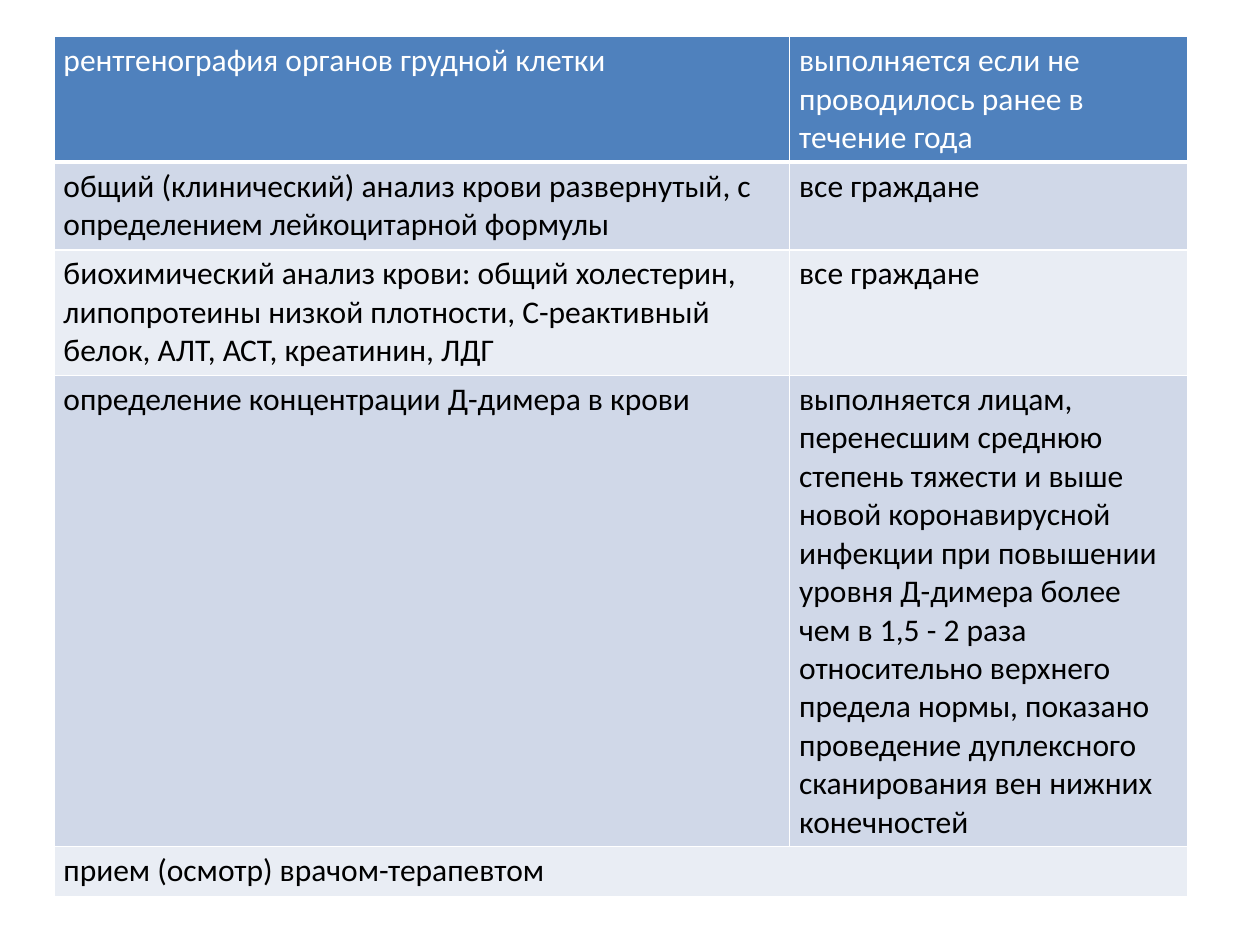
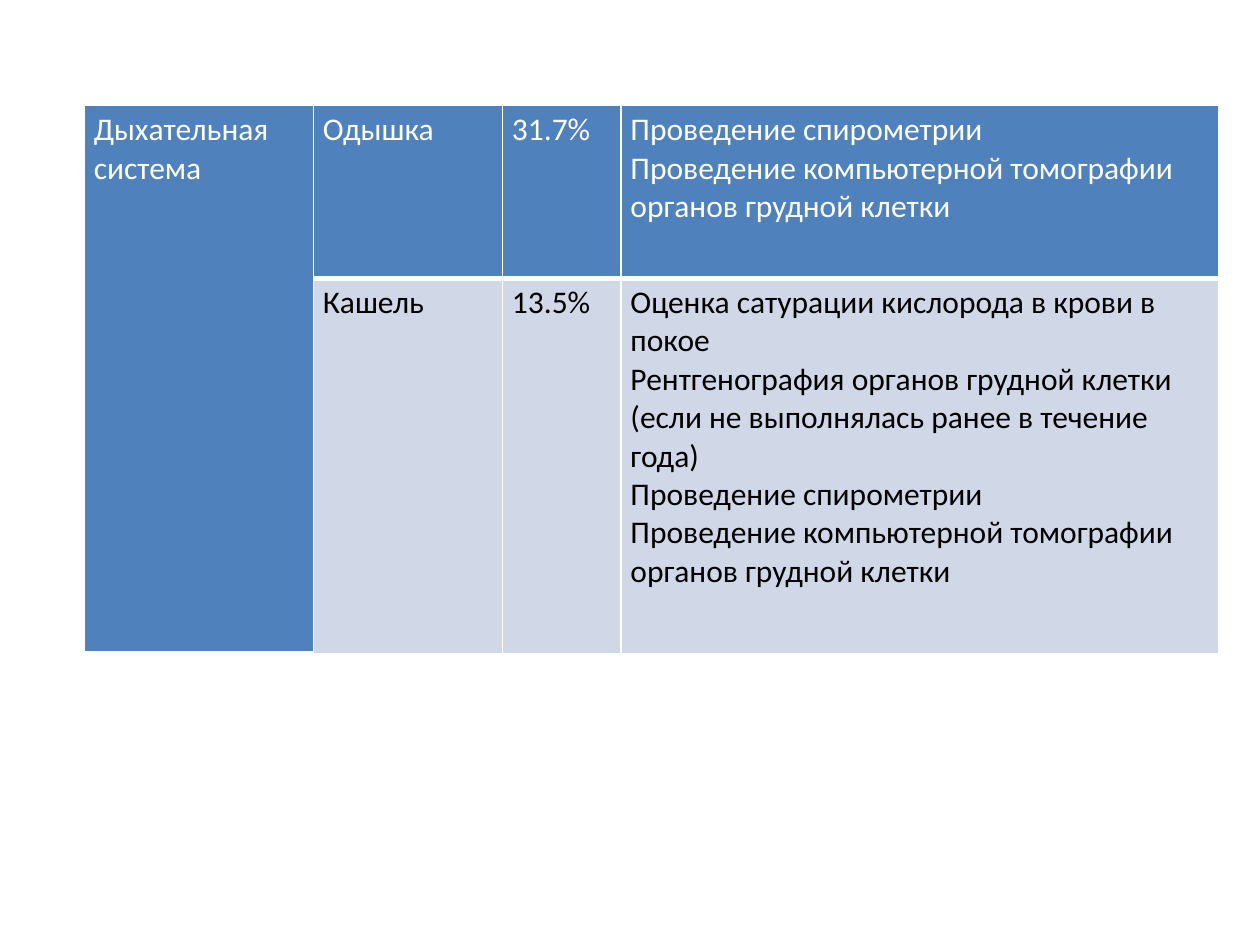
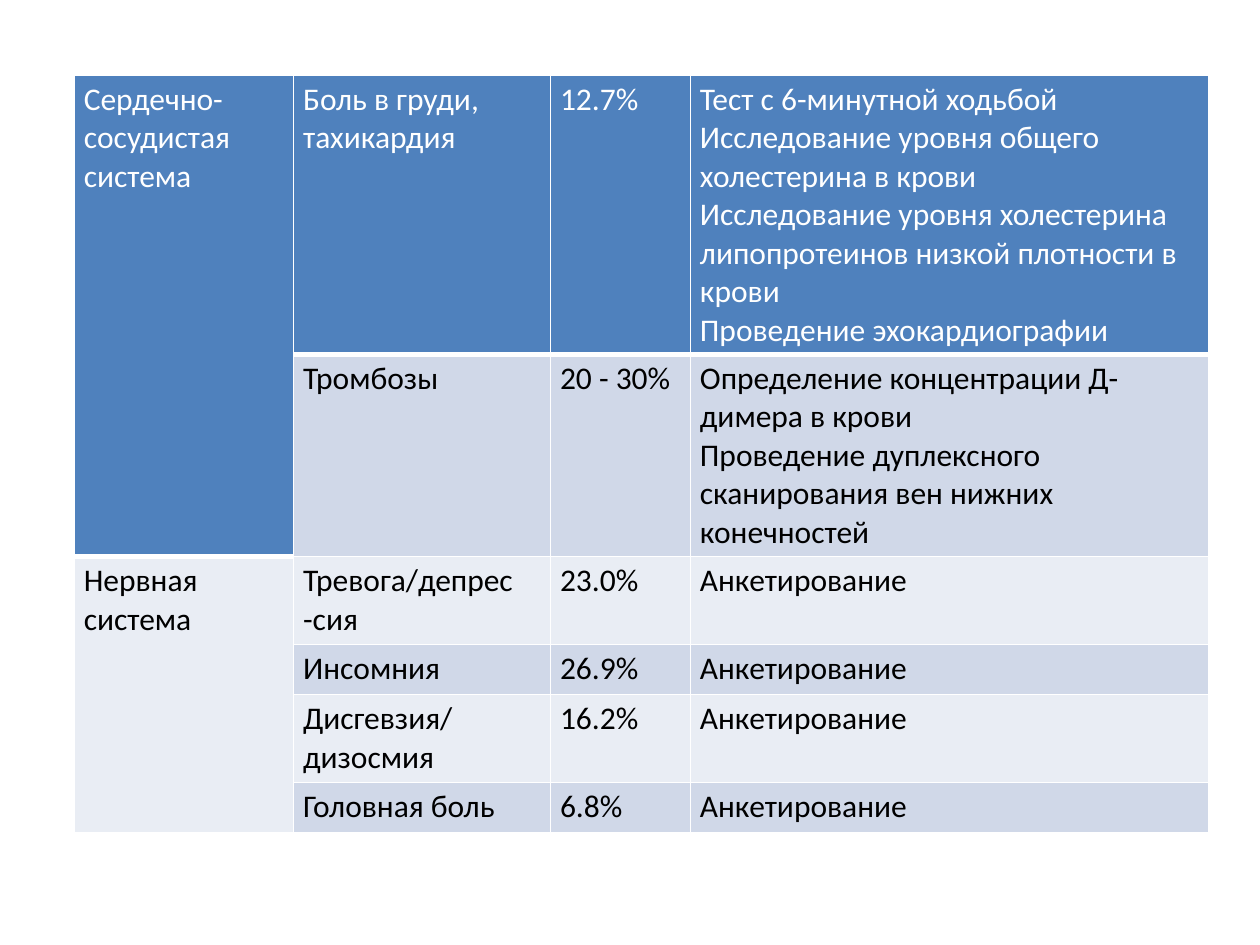
from dataclasses import dataclass

from lxml.etree import SubElement
from pptx import Presentation
from pptx.dml.color import RGBColor
from pptx.oxml.ns import qn
from pptx.util import Cm, Pt

WHITE = RGBColor(0xFF, 0xFF, 0xFF)
BLACK = RGBColor(0x00, 0x00, 0x00)
HEADER_BLUE = RGBColor(0x4F, 0x81, 0xBD)
BANDS = (RGBColor(0xE9, 0xED, 0xF4), RGBColor(0xD0, 0xD8, 0xE8))

FONT = "Calibri"
FONT_SIZE = Pt(18)
LINE_CM = 0.76
PADDING_CM = 0.25
THIN = Pt(1)
THICK = Pt(3)
BLANK_LAYOUT = 6


@dataclass(frozen=True)
class Span:
    top: int
    left: int
    bottom: int
    right: int

    def covers(self, row: int, column: int) -> bool:
        return self.top <= row <= self.bottom and self.left <= column <= self.right


@dataclass(frozen=True)
class Grid:
    left: float
    top: float
    widths: tuple[float, ...]
    heights: tuple[float, ...]
    rows: tuple[tuple[str, ...], ...]
    spans: tuple[Span, ...]

    def band_row(self, row: int, column: int) -> int:
        return next((s.top for s in self.spans if s.covers(row, column)), row)


def heights_for(*line_counts: int) -> tuple[float, ...]:
    return tuple(round(count * LINE_CM + PADDING_CM, 2) for count in line_counts)


EXAMINATIONS = Grid(
    left=1.09,
    top=0.74,
    widths=(14.83, 8.03),
    heights=heights_for(3, 2, 3, 12, 1),
    rows=(
        ("рентгенография органов грудной клетки",
         "выполняется если не проводилось ранее в течение года"),
        ("общий (клинический) анализ крови развернутый, с определением лейкоцитарной формулы",
         "все граждане"),
        ("биохимический анализ крови: общий холестерин, липопротеины низкой плотности, "
         "C-реактивный белок, АЛТ, АСТ, креатинин, ЛДГ",
         "все граждане"),
        ("определение концентрации Д-димера в крови",
         "выполняется лицам, перенесшим среднюю степень тяжести и выше новой "
         "коронавирусной инфекции при повышении уровня Д-димера более чем в 1,5 - 2 раза "
         "относительно верхнего предела нормы, показано проведение дуплексного "
         "сканирования вен нижних конечностей"),
        ("прием (осмотр) врачом-терапевтом", ""),
    ),
    spans=(Span(4, 0, 4, 1),),
)

RESPIRATORY = Grid(
    left=1.7,
    top=2.13,
    widths=(4.62, 3.81, 2.39, 12.04),
    heights=(3.48, 7.57),
    rows=(
        ("Дыхательная система", "Одышка", "31.7%",
         "Проведение спирометрии\v"
         "Проведение компьютерной томографии органов грудной клетки"),
        ("", "Кашель", "13.5%",
         "Оценка сатурации кислорода в крови в покое\v"
         "Рентгенография органов грудной клетки (если не выполнялась ранее в течение года)\v"
         "Проведение спирометрии\v"
         "Проведение компьютерной томографии органов грудной клетки"),
    ),
    spans=(Span(0, 0, 1, 0),),
)

HEART_AND_NERVES = Grid(
    left=1.5,
    top=1.52,
    widths=(4.42, 5.18, 2.82, 10.44),
    heights=heights_for(7, 5, 2, 1, 2, 1),
    rows=(
        ("Сердечно-сосудистая система", "Боль в груди, тахикардия", "12.7%",
         "Тест с 6-минутной ходьбой\v"
         "Исследование уровня общего холестерина в крови\v"
         "Исследование уровня холестерина липопротеинов низкой плотности в\v"
         "крови\v"
         "Проведение эхокардиографии"),
        ("", "Тромбозы", "20 - 30%",
         "Определение концентрации Д-димера в крови\v"
         "Проведение дуплексного сканирования вен нижних конечностей"),
        ("Нервная система", "Тревога/депрес -сия", "23.0%", "Анкетирование"),
        ("", "Инсомния", "26.9%", "Анкетирование"),
        ("", "Дисгевзия/\nдизосмия", "16.2%", "Анкетирование"),
        ("", "Головная боль", "6.8%", "Анкетирование"),
    ),
    spans=(Span(0, 0, 1, 0), Span(2, 0, 5, 0)),
)


def set_borders(cell, top: int, bottom: int) -> None:
    properties = cell._tc.get_or_add_tcPr()
    for side, width in (("L", THIN), ("R", THIN), ("T", top), ("B", bottom)):
        border = SubElement(properties, qn(f"a:ln{side}"), w=str(width))
        fill = SubElement(border, qn("a:solidFill"))
        SubElement(fill, qn("a:srgbClr"), val=str(WHITE))


def format_cell(cell, grid: Grid, row: int, column: int) -> None:
    band = grid.band_row(row, column)
    is_header = band == 0
    below_header = not is_header and grid.band_row(row - 1, column) == 0
    set_borders(cell, THICK if below_header else THIN, THICK if is_header else THIN)
    cell.fill.solid()
    cell.fill.fore_color.rgb = HEADER_BLUE if is_header else BANDS[band % 2]
    cell.margin_left = cell.margin_right = Cm(0.19)
    cell.margin_top = cell.margin_bottom = Cm(0.1)
    cell.text = grid.rows[row][column]
    for paragraph in cell.text_frame.paragraphs:
        font = paragraph.font
        font.name = FONT
        font.size = FONT_SIZE
        font.bold = False
        font.color.rgb = WHITE if is_header else BLACK


def draw_grid(slide, grid: Grid) -> None:
    table = slide.shapes.add_table(
        len(grid.rows), len(grid.widths), Cm(grid.left), Cm(grid.top),
        Cm(sum(grid.widths)), Cm(sum(grid.heights)),
    ).table
    table.first_row = False
    table.horz_banding = False
    for column, width in zip(table.columns, grid.widths):
        column.width = Cm(width)
    for row, height in zip(table.rows, grid.heights):
        row.height = Cm(height)
    for span in grid.spans:
        table.cell(span.top, span.left).merge(table.cell(span.bottom, span.right))
    for row in range(len(grid.rows)):
        for column in range(len(grid.widths)):
            format_cell(table.cell(row, column), grid, row, column)


def main() -> None:
    presentation = Presentation()
    presentation.slide_width = Cm(25.4)
    presentation.slide_height = Cm(19.05)
    for grid in (EXAMINATIONS, RESPIRATORY, HEART_AND_NERVES):
        draw_grid(presentation.slides.add_slide(presentation.slide_layouts[BLANK_LAYOUT]), grid)
    presentation.save("out.pptx")


if __name__ == "__main__":
    main()
